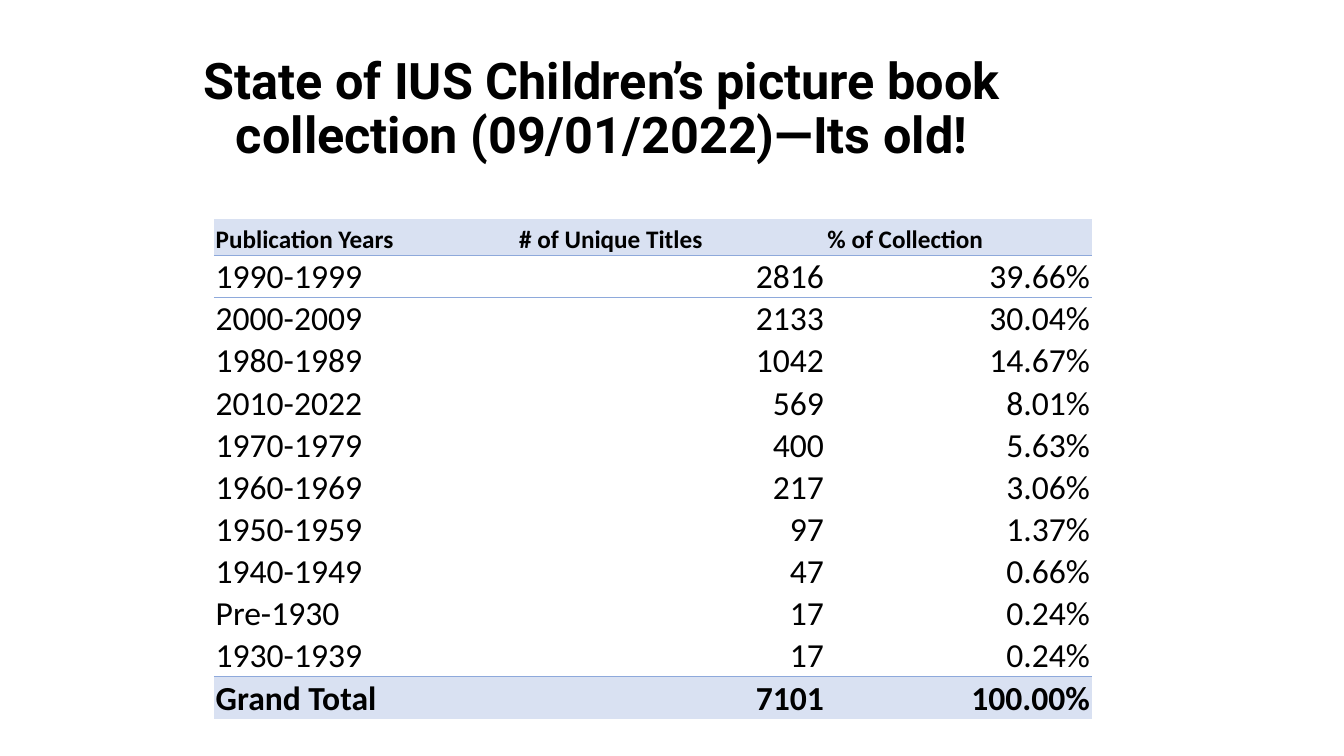
from lxml import etree
from pptx import Presentation
from pptx.dml.color import RGBColor
from pptx.enum.text import MSO_ANCHOR, PP_ALIGN
from pptx.oxml.ns import qn
from pptx.util import Pt

LEFT, CENTER, RIGHT = PP_ALIGN.LEFT, PP_ALIGN.CENTER, PP_ALIGN.RIGHT
MIDDLE, BOTTOM = MSO_ANCHOR.MIDDLE, MSO_ANCHOR.BOTTOM
COLORS = {"text": "000000", "band": "D9E1F2", "rule": "8EA9DB"}
PLAIN_TABLE = "{2D5ABB26-0587-4C30-8999-92F81FD0307C}"

HEADERS = ["Publication Years", "# of Unique Titles", "% of Collection"]
PERIODS = [
    ["1990-1999", "2816", "39.66%"],
    ["2000-2009", "2133", "30.04%"],
    ["1980-1989", "1042", "14.67%"],
    ["2010-2022", "569", "8.01%"],
    ["1970-1979", "400", "5.63%"],
    ["1960-1969", "217", "3.06%"],
    ["1950-1959", "97", "1.37%"],
    ["1940-1949", "47", "0.66%"],
    ["Pre-1930", "17", "0.24%"],
    ["1930-1939", "17", "0.24%"],
]
TOTAL = ["Grand Total", "7101", "100.00%"]


class SlideBuilder:
    title_font = "Roboto"
    body_font = "Calibri"

    def __init__(self, slide):
        self.slide = slide

    def format(self, p, font, size, bold, align):
        p.alignment = align
        for r in p.runs:
            r.font.name = font
            r.font.size = Pt(size)
            r.font.bold = bold
            r.font.color.rgb = RGBColor.from_string(COLORS["text"])

    def title(self, text, x, y, w, h):
        sp = self.slide.shapes.add_textbox(Pt(x), Pt(y), Pt(w), Pt(h))
        tf = sp.text_frame
        tf.word_wrap = True
        tf.vertical_anchor = MIDDLE
        tf.text = text
        p = tf.paragraphs[0]
        p.line_spacing = 0.9
        self.format(p, self.title_font, 36, True, CENTER)

    def rule(self, cell, side):
        ln = etree.SubElement(cell._tc.get_or_add_tcPr(), qn(f"a:ln{side}"), w=str(Pt(0.5)))
        fill = etree.SubElement(ln, qn("a:solidFill"))
        etree.SubElement(fill, qn("a:srgbClr"), val=COLORS["rule"])

    def cell(self, cell, text, size, banded, align, rules):
        cell.margin_left = cell.margin_right = cell.margin_top = Pt(1.3)
        cell.margin_bottom = 0
        cell.vertical_anchor = BOTTOM
        cell.text = text
        self.format(cell.text_frame.paragraphs[0], self.body_font, size, banded, align)
        for side in rules:
            self.rule(cell, side)
        if banded:
            cell.fill.solid()
            cell.fill.fore_color.rgb = RGBColor.from_string(COLORS["band"])
        else:
            cell.fill.background()

    def table(self, rows, x, y, widths, row_height):
        last = len(rows) - 1
        sp = self.slide.shapes.add_table(
            len(rows), len(widths), Pt(x), Pt(y), Pt(sum(widths)), Pt(row_height * len(rows)))
        table = sp.table
        table.first_row = table.horz_banding = False
        table._tbl.tblPr.find(qn("a:tableStyleId")).text = PLAIN_TABLE
        for column, width in zip(table.columns, widths):
            column.width = Pt(width)
        # Rules lie below the header and above the total
        rules = {0: "B", 1: "T", last - 1: "B", last: "T"}
        for i, values in enumerate(rows):
            table.rows[i].height = Pt(row_height)
            for j, value in enumerate(values):
                align = RIGHT if i and j else LEFT
                self.cell(table.cell(i, j), value, 24 if i else 18,
                          i in (0, last), align, rules.get(i, ""))


def main():
    prs = Presentation()
    prs.slide_width, prs.slide_height = Pt(960), Pt(540)
    s = SlideBuilder(prs.slides.add_slide(prs.slide_layouts[6]))

    # Title
    s.title("State of IUS Children’s picture book collection (09/01/2022)—Its old!",
            80, 28.8, 700, 99.4)

    # Collection by publication years
    s.table([HEADERS, *PERIODS, TOTAL], 152.8, 156.6, [216.8, 220.2, 190], 25.5)

    prs.save("out.pptx")


if __name__ == "__main__":
    main()
